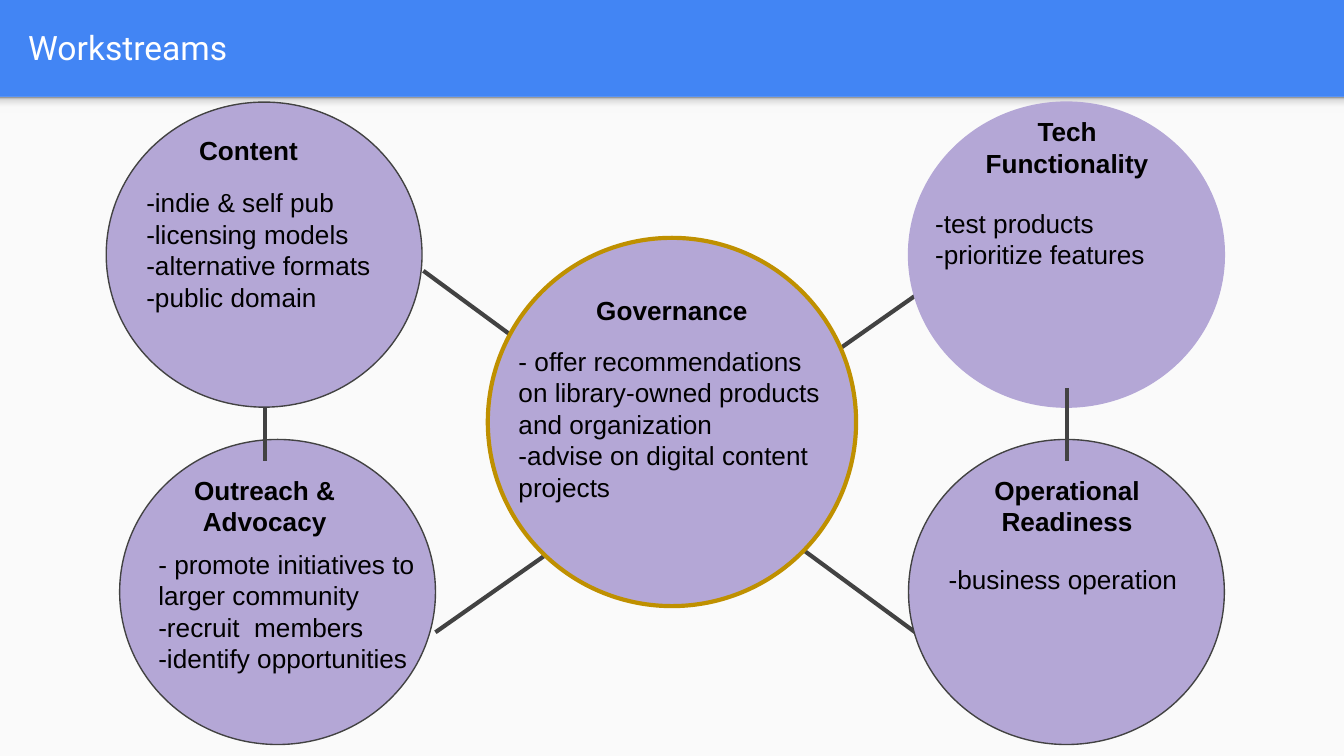
from lxml import etree
from pptx import Presentation
from pptx.dml.color import RGBColor
from pptx.enum.shapes import MSO_CONNECTOR, MSO_SHAPE
from pptx.enum.text import MSO_ANCHOR, PP_ALIGN
from pptx.oxml.ns import qn
from pptx.util import Inches, Pt

COLORS = {
    "header": "4285F4", "panel": "FAFAFA", "circle": "B4A7D6", "line": "424242",
    "gold": "BF9000", "text": "000000", "title": "FFFFFF",
}
SHADE_STOPS = [(0, "F9F9F9"), (36, "F9F9F9"), (80, "DEDEDE"), (100, "999999")]
TOP, LEFT, BOTTOM, RIGHT = range(4)
OUTER = (2.35, 2.27)
ONE_LINE, TWO_LINES = (1.54, 0.38), (1.54, 0.66)
BODY = (2.16, 1.45)

# name: circle box, outline, outline width, heading box in the circle, heading lines,
#       body box in the circle, body lines
WORKSTREAMS = {
    "outreach": ((0.89, 3.27, *OUTER), "line", 0.75,
                 (0.31, 0.16, *TWO_LINES), ["Outreach &", "Advocacy"],
                 (0.19, 0.71, *BODY),
                 ["- promote initiatives to larger community",
                  "-recruit  members", "-identify opportunities"]),
    "governance": ((3.63, 1.77, 2.74, 2.74), "gold", 2.25,
                   (0.6, 0.32, *ONE_LINE), ["Governance"],
                   (0.13, 0.7, 2.56, 1.45),
                   ["- offer recommendations on library-owned products and organization",
                    "-advise on digital content projects"]),
    "tech": ((6.76, 0.76, *OUTER), "circle", 0.75,
             (0.41, 0, *TWO_LINES), ["Tech", "Functionality"],
             (0.1, 0.68, *BODY),
             ["-test products", "-prioritize features"]),
    "operations": ((6.76, 3.27, *OUTER), "line", 0.75,
                   (0.41, 0.16, *TWO_LINES), ["Operational Readiness"],
                   (0.2, 0.82, *BODY),
                   ["-business operation"]),
    "content": ((0.79, 0.76, *OUTER), "line", 0.75,
                (0.29, 0.14, *ONE_LINE), ["Content"],
                (0.2, 0.53, *BODY),
                ["-indie & self pub", "-licensing models",
                 "-alternative formats", "-public domain"]),
}


def rgb(name):
    return RGBColor.from_string(COLORS[name])


def add_filled(slide, kind, box, color):
    sp = slide.shapes.add_shape(kind, *map(Inches, box))
    sp.shadow.inherit = False
    sp.fill.solid()
    sp.fill.fore_color.rgb = rgb(color)
    sp.line.fill.background()
    return sp


def set_margins(tf):
    tf.margin_left = tf.margin_right = tf.margin_top = tf.margin_bottom = Inches(0.1)
    tf.word_wrap = True


def add_text(slide, origin, box, lines, heading=False):
    """Text box whose left and top are measured from the origin."""
    x, y, w, h = box
    sp = slide.shapes.add_textbox(
        Inches(origin[0] + x), Inches(origin[1] + y), Inches(w), Inches(h))
    tf = sp.text_frame
    set_margins(tf)
    tf.text = "\n".join(lines)
    for p in tf.paragraphs:
        p.alignment = PP_ALIGN.CENTER if heading else PP_ALIGN.LEFT
        font = p.runs[0].font
        font.name, font.size, font.bold = "Arial", Pt(14), heading
        font.color.rgb = rgb("text")
    return sp


def add_header(slide, box):
    """Format the title in the blue band that the background forms."""
    x, y, w, h = box
    title = slide.shapes.title
    title.left, title.top = Inches(x + 0.11), Inches(y + 0.02)
    title.width, title.height = Inches(w - 0.35), Inches(h - 0.06)
    tf = title.text_frame
    set_margins(tf)
    tf.vertical_anchor = MSO_ANCHOR.MIDDLE
    tf.text = "Workstreams"
    p = tf.paragraphs[0]
    p.alignment = PP_ALIGN.LEFT
    font = p.runs[0].font
    font.name, font.size = "Roboto", Pt(18)
    font.color.rgb = rgb("title")


def add_panel(slide, box):
    """Light content area with a soft shade along its top edge."""
    x, y, w, h = box
    add_filled(slide, MSO_SHAPE.RECTANGLE, box, "panel")
    shade = add_filled(slide, MSO_SHAPE.RECTANGLE, (x, y, w, 0.12), "panel")
    shade.fill.gradient()
    shade.fill.gradient_angle = 90
    stops = shade._element.spPr.find(qn("a:gradFill")).find(qn("a:gsLst"))
    for gs in list(stops):
        stops.remove(gs)
    for pos, color in SHADE_STOPS:
        gs = etree.SubElement(stops, qn("a:gs"), pos=str(pos * 1000))
        etree.SubElement(gs, qn("a:srgbClr"), val=color)


def add_workstream(slide, box, outline, width, head_box, head, body_box, body):
    circle = add_filled(slide, MSO_SHAPE.OVAL, box, "circle")
    circle.line.color.rgb = rgb(outline)
    circle.line.width = Pt(width)
    heading = add_text(slide, box, head_box, head, heading=True)
    return circle, heading, add_text(slide, box, body_box, body)


def add_link(slide, end, start=None, at=(0, 0)):
    """Line to a (shape, side) pair from another pair or from a point."""
    x, y = map(Inches, at)
    c = slide.shapes.add_connector(MSO_CONNECTOR.STRAIGHT, x, y, x, y)
    if start:
        c.begin_connect(*start)
    c.end_connect(*end)
    c.line.color.rgb = rgb("line")
    c.line.width = Pt(2.25)
    etree.SubElement(c._element.spPr, qn("a:effectLst"))
    return c


def add_links(slide, parts):
    """Diagonals go behind all circles, the vertical links in front."""
    circle, heading, body = (
        {name: shapes[i] for name, shapes in parts.items()} for i in range(3))
    for left, right in (("outreach", "tech"), ("content", "operations")):
        c = add_link(slide, (body[right], LEFT), (body[left], RIGHT))
        circle["outreach"]._element.addprevious(c._element)
    add_link(slide, (heading["outreach"], TOP), at=(1.97, 3.03))
    add_link(slide, (heading["operations"], TOP), (body["tech"], BOTTOM))


def main():
    prs = Presentation()
    prs.slide_width, prs.slide_height = Inches(10), Inches(5.625)
    slide = prs.slides.add_slide(prs.slide_layouts[5])
    slide.background.fill.solid()
    slide.background.fill.fore_color.rgb = rgb("header")
    add_header(slide, (0, 0, 10, 0.72))
    add_panel(slide, (0, 0.72, 10, 4.91))
    parts = {name: add_workstream(slide, *stream) for name, stream in WORKSTREAMS.items()}
    add_links(slide, parts)
    prs.save("out.pptx")


if __name__ == "__main__":
    main()
